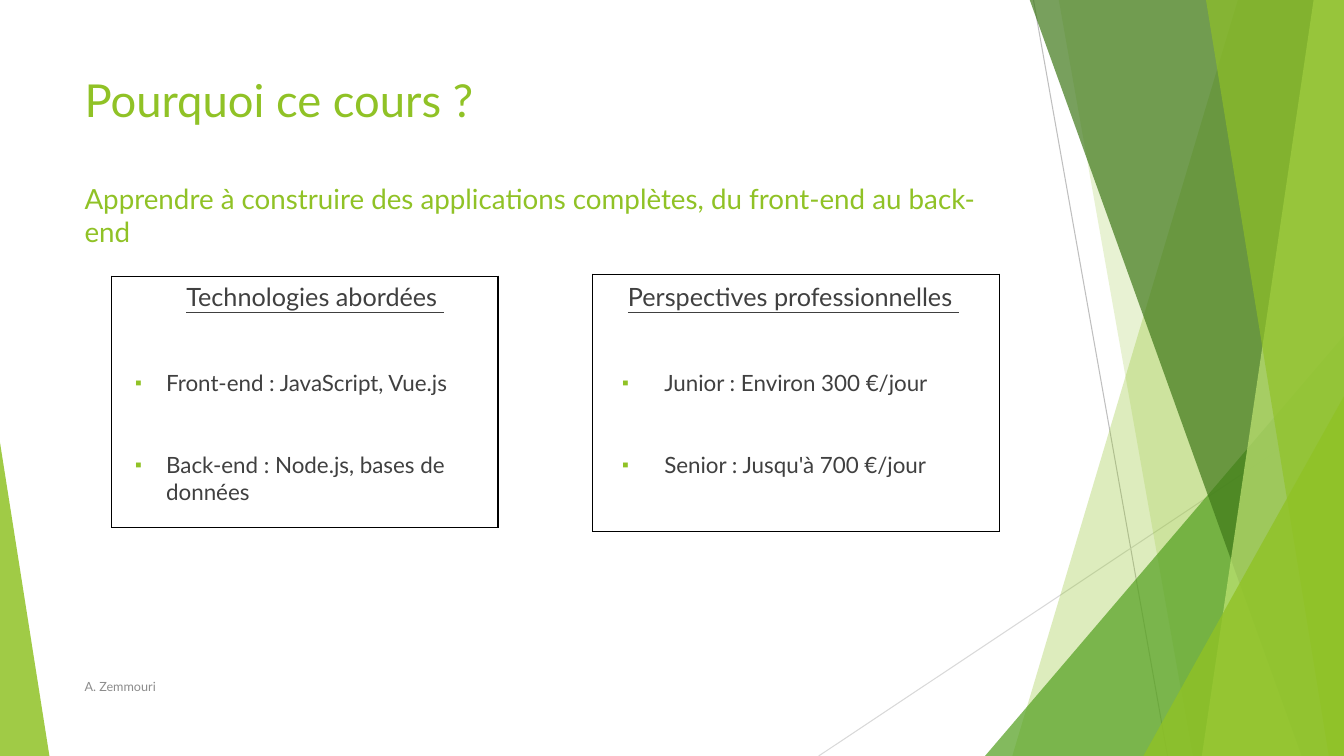
from lxml import etree
from pptx import Presentation
from pptx.dml.color import RGBColor
from pptx.enum.shapes import MSO_CONNECTOR, MSO_SHAPE
from pptx.enum.text import MSO_ANCHOR
from pptx.oxml.ns import qn
from pptx.util import Inches, Pt

STRAIGHT = MSO_CONNECTOR.STRAIGHT
TRIANGLE = MSO_SHAPE.ISOSCELES_TRIANGLE
TOP, MIDDLE = MSO_ANCHOR.TOP, MSO_ANCHOR.MIDDLE

# Content
TITLE = "Pourquoi ce cours ?"
SUBTITLE = "Apprendre à construire des applications complètes, du front-end au back-end"
AUTHOR = "A. Zemmouri"
COLUMNS = [
    {
        "left": 0.74, "heading": "Technologies abordées ", "heading_indent": 1.01,
        "bullets": ["Front-end : JavaScript, Vue.js", "Back-end : Node.js, bases de données"],
        "text_indent": 0.81, "frame": (1.11, 2.74, 3.83, 2.49),
    },
    {
        "left": 5.57, "heading": "Perspectives professionnelles ", "heading_indent": 0.56,
        "bullets": ["Junior : Environ 300 €/jour", "Senior : Jusqu'à 700 €/jour"],
        "text_indent": 0.92, "frame": (5.88, 2.72, 4.03, 2.55),
    },
]

THEME = {
    "font": "Lato", "green": "90C226", "leaf": "54A021", "forest": "3F7819",
    "lime": "C0E474", "text": "404040", "muted": "8C8C8C", "border": "000000",
    "ray_dark": "BFBFBF", "ray_light": "D9D9D9",
    "title": 32.4, "subtitle": 19.8, "heading": 18, "bullet": 16, "footer": 9,
}

# Geometry in inches
WIDTH, HEIGHT, BLEED_TOP = 13.33, 7.5, -0.01
COLUMN_TOP, COLUMN_WIDTH, COLUMN_HEIGHT = 2.74, 4.58, 3.86
BULLET_INDENT, LINE_FACTOR, PARA_GAP = 0.5, 1.2, 10

# Background, back to front: bands are (top left x, bottom left x),
# triangles are (left, top, width, apex position)
RAYS = [
    ((10.25, 0), (11.58, HEIGHT), "ray_dark"),
    ((WIDTH, 4.03), (8.12, HEIGHT), "ray_light"),
]
FACETS = [
    ("band", (12.28, 10.04), "green", 30),
    ("band", (10.5, 11.83), "green", 20),
    ("triangle", (9.77, 3.33, 3.56, 1), "leaf", 72),
    ("band", (10.21, 12.91), "forest", 70),
    ("band", (13.03, 11.92), "lime", 70),
    ("band", (11.96, 13.18), "green", 65),
    ("triangle", (11.34, 3.93, 1.99, 1), "green", 80),
    ("triangle", (0, 4.39, 0.49, 0), "green", 85),
]


def color(name):
    return RGBColor.from_string(THEME[name])


def add_ray(page, start, end, tone):
    ray = page.shapes.add_connector(STRAIGHT, *[Inches(v) for v in (*start, *end)])
    ray.line.color.rgb = color(tone)
    ray.line.width = Pt(0.75)
    etree.SubElement(ray._element.spPr, qn("a:effectLst"))


def add_band(page, top_x, bottom_x):
    outline = page.shapes.build_freeform(Inches(top_x), Inches(BLEED_TOP))
    corners = [(WIDTH, BLEED_TOP), (WIDTH, HEIGHT), (bottom_x, HEIGHT)]
    outline.add_line_segments([(Inches(x), Inches(y)) for x, y in corners], close=True)
    return outline.convert_to_shape()


def add_triangle(page, left, top, width, apex):
    box = [Inches(v) for v in (left, top, width, HEIGHT - top)]
    shape = page.shapes.add_shape(TRIANGLE, *box)
    shape.adjustments[0] = apex
    return shape


def paint(shape, tone, opacity):
    shape.shadow.inherit = False
    shape.line.fill.background()
    shape.fill.solid()
    shape.fill.fore_color.rgb = color(tone)
    tint = shape._element.spPr.find(qn("a:solidFill"))[0]
    etree.SubElement(tint, qn("a:alpha"), val=str(opacity * 1000))


def add_text_box(page, left, top, width, height, anchor=TOP):
    box = page.shapes.add_textbox(*[Inches(v) for v in (left, top, width, height)])
    frame = box.text_frame
    frame.word_wrap = True
    frame.vertical_anchor = anchor
    return frame


def write(para, text, size, tone, space_before=0, underline=False):
    para.space_before = Pt(space_before)
    span = para.add_run()
    span.text = text
    span.font.name = THEME["font"]
    span.font.size = Pt(THEME[size])
    span.font.color.rgb = color(tone)
    span.font.underline = underline


def indent(para, margin, first_line=0):
    properties = para._p.get_or_add_pPr()
    properties.set("marL", str(Inches(margin)))
    properties.set("indent", str(Inches(first_line)))
    return properties


def add_bullet(para, margin):
    properties = indent(para, margin, BULLET_INDENT - margin)
    tint = etree.SubElement(properties, qn("a:buClr"))
    etree.SubElement(tint, qn("a:srgbClr"), val=THEME["green"])
    etree.SubElement(properties, qn("a:buSzPct"), val="80000")
    etree.SubElement(properties, qn("a:buFont"), typeface=THEME["font"])
    etree.SubElement(properties, qn("a:buChar"), char="▪")


def add_frame(page, left, top, width, height):
    box = [Inches(v) for v in (left, top, width, height)]
    table = page.shapes.add_table(1, 1, *box).table
    table.first_row = table.horz_banding = False
    cell = table.cell(0, 0)
    properties = cell._tc.get_or_add_tcPr()
    for side in ("a:lnL", "a:lnR", "a:lnT", "a:lnB"):
        edge = etree.SubElement(properties, qn(side), w=str(Pt(1)))
        fill = etree.SubElement(edge, qn("a:solidFill"))
        etree.SubElement(fill, qn("a:srgbClr"), val=THEME["border"])
    cell.fill.background()


def add_column(page, column):
    frame = add_text_box(page, column["left"], COLUMN_TOP, COLUMN_WIDTH, COLUMN_HEIGHT)
    heading = frame.paragraphs[0]
    write(heading, column["heading"], "heading", "text", underline=True)
    indent(heading, column["heading_indent"])
    # One line of the preceding size separates each entry
    for text, previous in zip(column["bullets"], ("heading", "bullet")):
        para = frame.add_paragraph()
        gap = 2 * PARA_GAP + LINE_FACTOR * THEME[previous]
        write(para, text, "bullet", "text", gap)
        add_bullet(para, column["text_indent"])


def main():
    deck = Presentation()
    deck.slide_width, deck.slide_height = Inches(WIDTH), Inches(HEIGHT)
    page = deck.slides.add_slide(deck.slide_layouts[6])

    # Background
    for start, end, tone in RAYS:
        add_ray(page, start, end, tone)
    builders = {"band": add_band, "triangle": add_triangle}
    for kind, geometry, tone, opacity in FACETS:
        paint(builders[kind](page, *geometry), tone, opacity)

    # Title and subtitle
    frame = add_text_box(page, 0.74, 0.67, 9.4, 1.44)
    write(frame.paragraphs[0], TITLE, "title", "green")
    write(frame.add_paragraph(), SUBTITLE, "subtitle", "green", LINE_FACTOR * THEME["title"])

    # Columns, footer and frames
    for column in COLUMNS:
        add_column(page, column)
    footer = add_text_box(page, 0.74, 6.61, 6.89, 0.4, MIDDLE)
    write(footer.paragraphs[0], AUTHOR, "footer", "muted")
    for column in COLUMNS:
        add_frame(page, *column["frame"])

    deck.save("out.pptx")


if __name__ == "__main__":
    main()
